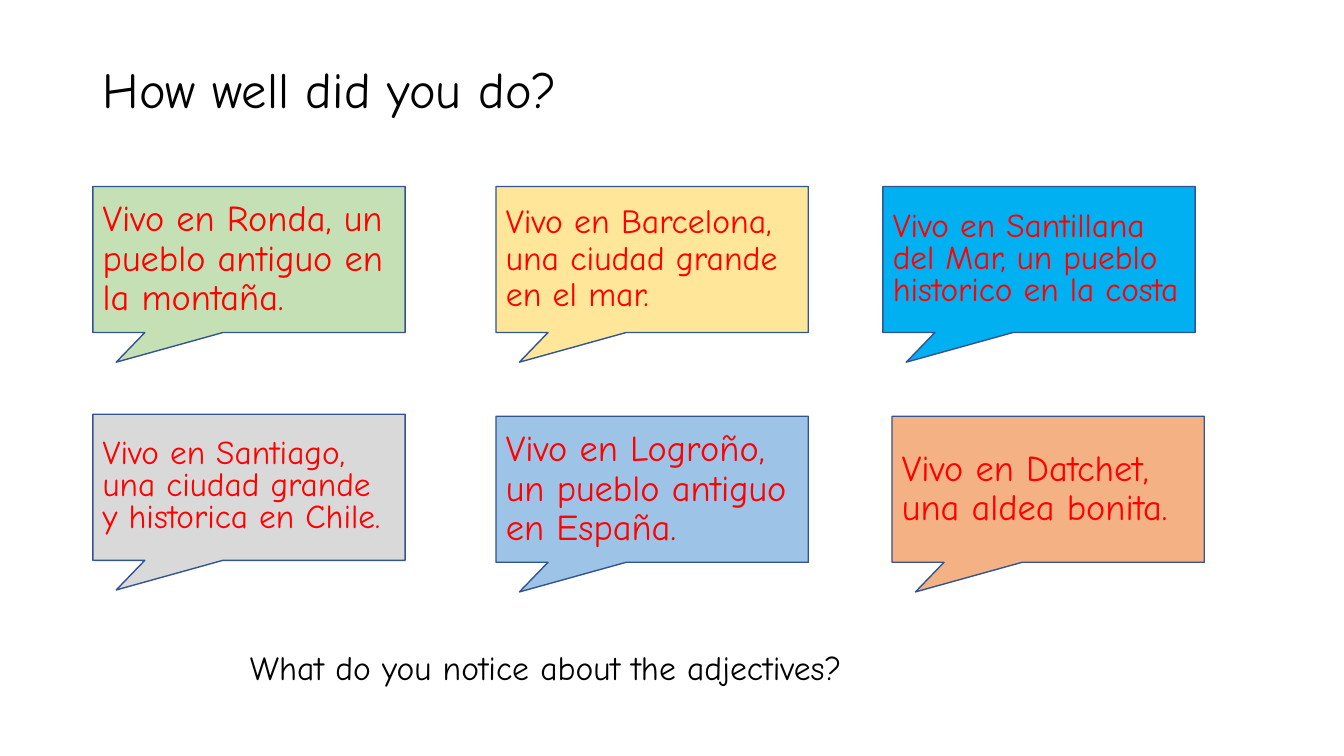
from pptx import Presentation
from pptx.dml.color import RGBColor
from pptx.enum import shapes, text
from pptx.util import Cm, Pt

FONT = "Comic Neue"
BLACK, RED, OUTLINE = "000000", "FF0000", "325491"
CALLOUT_WIDTH, CALLOUT_HEIGHT = 7.87, 3.68

# left, top, fill, font size, line spacing, sentence
CALLOUTS = [
    (2.34, 4.7, "C5E0B4", 26, 0.9, "Vivo en Ronda, un pueblo antiguo en la montaña."),
    (12.5, 4.7, "FFE699", 24.1, 0.9, "Vivo en Barcelona, una ciudad grande en el mar."),
    (22.25, 4.7, "00B0F0", 23.8, 0.8,
     "Vivo en Santillana del Mar, un pueblo historico en la costa"),
    (2.34, 10.44, "D9D9D9", 23.8, 0.8,
     "Vivo en Santiago, una ciudad grande y historica en Chile."),
    (12.5, 10.49, "9DC3E6", 26, 0.9, "Vivo en Logroño, un pueblo antiguo en España."),
    (22.48, 10.49, "F4B183", 26, 0.9, "Vivo en Datchet, una aldea bonita."),
]


def colour(value):
    return RGBColor.from_string(value)


def write(frame, words, size, ink, spacing=1.0):
    """Put one left-aligned run of text into a frame."""
    para = frame.paragraphs[0]
    para.alignment = text.PP_ALIGN.LEFT
    para.line_spacing = spacing
    para.space_before = Pt(0)
    span = para.add_run()
    span.text = words
    span.font.name = FONT
    span.font.size = Pt(size)
    span.font.color.rgb = colour(ink)


def set_title(page, words):
    title = page.shapes.title
    title.left, title.top = Cm(2.34), Cm(0.48)
    title.width, title.height = Cm(32.89), Cm(3.68)
    title.text_frame.vertical_anchor = text.MSO_ANCHOR.MIDDLE
    write(title.text_frame, words, 36, BLACK, 0.9)


def add_callout(page, left, top, fill, size, spacing, words):
    box = page.shapes.add_shape(
        shapes.MSO_SHAPE.RECTANGULAR_CALLOUT,
        Cm(left), Cm(top), Cm(CALLOUT_WIDTH), Cm(CALLOUT_HEIGHT))
    box.adjustments[0], box.adjustments[1] = -0.425, 0.703
    box.shadow.inherit = False
    box.fill.solid()
    box.fill.fore_color.rgb = colour(fill)
    box.line.color.rgb = colour(OUTLINE)
    box.line.width = Pt(1)
    box.text_frame.word_wrap = True
    box.text_frame.vertical_anchor = text.MSO_ANCHOR.MIDDLE
    write(box.text_frame, words, size, RED, spacing)


def add_question(page, words):
    box = page.shapes.add_textbox(Cm(6.05), Cm(16.18), Cm(17.68), Cm(1.27))
    box.text_frame.word_wrap = False
    box.text_frame.auto_size = text.MSO_AUTO_SIZE.SHAPE_TO_FIT_TEXT
    write(box.text_frame, words, 24, BLACK)


def main():
    deck = Presentation()
    deck.slide_width, deck.slide_height = Cm(33.87), Cm(19.05)
    page = deck.slides.add_slide(deck.slide_layouts.get_by_name("Title Only"))
    set_title(page, "How well did you do?")
    for callout in CALLOUTS:
        add_callout(page, *callout)
    add_question(page, "What do you notice about the adjectives?")
    deck.save("out.pptx")


if __name__ == "__main__":
    main()
